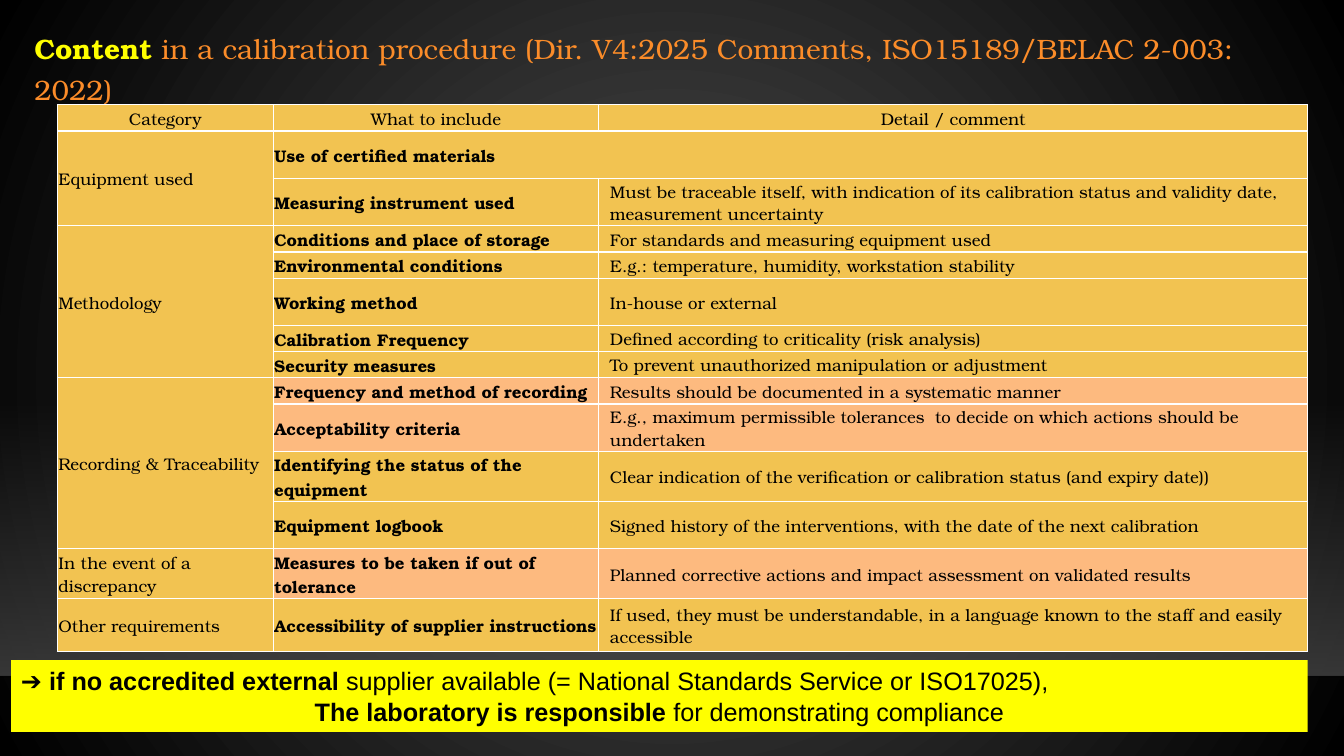
from lxml import etree
from pptx import Presentation
from pptx.dml.color import RGBColor
from pptx.enum.shapes import MSO_CONNECTOR, MSO_SHAPE
from pptx.enum.text import MSO_ANCHOR, MSO_AUTO_SIZE, PP_ALIGN
from pptx.oxml import parse_xml
from pptx.oxml.ns import nsdecls, qn
from pptx.util import Inches, Pt

LEFT, CENTER = PP_ALIGN.LEFT, PP_ALIGN.CENTER
TOP, MIDDLE = MSO_ANCHOR.TOP, MSO_ANCHOR.MIDDLE
RECT, STRAIGHT = MSO_SHAPE.RECTANGLE, MSO_CONNECTOR.STRAIGHT
NO_FIT = MSO_AUTO_SIZE.NONE
SERIF, SANS = "TeX Gyre Bonum", "Arial"

COLORS = {
    "glow": "505050", "edge": "000000", "haze": "454545", "floor": "000001",
    "key": "FFFF00", "title": "FB8C29", "text": "000000",
    "cell": "F2C351", "hot": "FDBA7F", "border": "FFFFFF",
}

TITLE = [
    ("Content", True, "key"),
    (" in a calibration procedure (Dir. V4:2025 Comments, "
     "ISO15189/BELAC 2-003: 2022)", False, "title"),
]
HEADS = ["Category", "What to include", "Detail / comment"]
# Category, then its rows: item, detail, row height, highlighted
GROUPS = [
    ("Equipment used", [
        ("Use of certified materials", "", 0.47, False),
        ("Measuring instrument used",
         "Must be traceable itself, with indication of its calibration status "
         "and validity date, measurement uncertainty", 0.47, False),
    ]),
    ("Methodology", [
        ("Conditions and place of storage",
         "For standards and measuring equipment used", 0.26, False),
        ("Environmental conditions",
         "E.g.: temperature, humidity, workstation stability", 0.26, False),
        ("Working method", "In-house or external", 0.47, False),
        ("Calibration Frequency",
         "Defined according to criticality (risk analysis)", 0.26, False),
        ("Security measures",
         "To prevent unauthorized manipulation or adjustment", 0.26, False),
    ]),
    ("Recording & Traceability", [
        ("Frequency and method of recording",
         "Results should be documented in a systematic manner", 0.26, True),
        ("Acceptability criteria",
         "E.g., maximum permissible tolerances  to decide on which actions "
         "should be undertaken", 0.47, True),
        ("Identifying the status of the equipment",
         "Clear indication of the verification or calibration status "
         "(and expiry date))", 0.47, False),
        ("Equipment logbook",
         "Signed history of the interventions, with the date of the next "
         "calibration", 0.47, False),
    ]),
    ("In the event of a discrepancy", [
        ("Measures to be taken if out of tolerance",
         "Planned corrective actions and impact assessment on validated "
         "results", 0.47, True),
    ]),
    ("Other requirements", [
        ("Accessibility of supplier instructions",
         "If used, they must be understandable, in a language known to the "
         "staff and easily accessible", 0.52, False),
    ]),
]
NOTE = [
    (LEFT, [("➔ ", False, "text"),
            ("if no accredited external ", True, "text"),
            ("supplier available (= National Standards Service or ISO17025),",
             False, "text")]),
    (CENTER, [("The laboratory is responsible ", True, "text"),
              ("for demonstrating compliance", False, "text")]),
]
WIDTHS = [2.14, 3.23, 7.03]
HEAD_H = 0.26


def rgb(name):
    return RGBColor.from_string(COLORS[name])


def box(left, top, width, height):
    return [Inches(v) for v in (left, top, width, height)]


def write(para, runs, face, size, align=LEFT):
    para.alignment = align
    for text, bold, color in runs:
        run = para.add_run()
        run.text = text
        font = run.font
        font.name, font.size, font.bold = face, Pt(size), bold
        font.color.rgb = rgb(color)


def set_alpha(color, percent):
    etree.SubElement(color, qn("a:alpha")).set("val", str(percent * 1000))


def paint_back(slide):
    slide.background.fill.solid()
    props = slide.background._cSld.bg.bgPr
    props.replace(props[0], parse_xml(
        f'<a:gradFill {nsdecls("a")} rotWithShape="1"><a:gsLst>'
        f'<a:gs pos="0"><a:srgbClr val="{COLORS["glow"]}"/></a:gs>'
        f'<a:gs pos="100000"><a:srgbClr val="{COLORS["edge"]}"/></a:gs>'
        '</a:gsLst><a:path path="circle"><a:fillToRect l="50000" t="50000" '
        'r="50000" b="50000"/></a:path></a:gradFill>'))


def add_haze(slide):
    """Grey band that fades in downwards and ends at a thin floor line."""
    haze = slide.shapes.add_shape(RECT, *box(0, 3.96, 13.33, 2.74))
    haze.shadow.inherit = False
    haze.line.fill.background()
    haze.fill.gradient()
    haze.fill.gradient_angle = 270
    for stop, place, alpha in zip(haze.fill.gradient_stops, (0, 1), (0, 80)):
        stop.position = place
        stop.color.rgb = rgb("haze")
    for color, alpha in zip(haze._element.spPr.iter(qn("a:srgbClr")), (0, 80)):
        set_alpha(color, alpha)
    floor = slide.shapes.add_connector(STRAIGHT, *box(0, 6.71, 13.33, 6.71))
    floor.line.width = Pt(1)
    floor.line.color.rgb = rgb("floor")
    props = floor._element.spPr
    set_alpha(next(props.iter(qn("a:srgbClr"))), 20)
    etree.SubElement(props, qn("a:effectLst"))


def add_title(slide):
    title = slide.shapes.title
    title.left, title.top, title.width, title.height = box(0.24, 0.2, 12.86, 0.85)
    frame = title.text_frame
    frame.word_wrap, frame.auto_size = True, NO_FIT
    frame.vertical_anchor = TOP
    para = frame.paragraphs[0]
    para.line_spacing = 1.2
    write(para, TITLE, SERIF, 20)


def fill_cell(cell, text, color="cell", bold=False, align=LEFT, indent=0):
    cell.vertical_anchor = MIDDLE
    cell.margin_left = cell.margin_top = cell.margin_right = Inches(0.01)
    cell.margin_bottom = 0
    cell.fill.solid()
    cell.fill.fore_color.rgb = rgb(color)
    props = cell._tc.get_or_add_tcPr()
    for spot, side in enumerate("LRTB"):
        props.insert(spot, parse_xml(
            f'<a:ln{side} {nsdecls("a")} w="12700"><a:solidFill>'
            f'<a:srgbClr val="{COLORS["border"]}"/></a:solidFill></a:ln{side}>'))
    para = cell.text_frame.paragraphs[0]
    para.font.size = Pt(12)
    if indent:
        pp = para._p.get_or_add_pPr()
        pp.set("marL", str(Inches(indent)))
        pp.set("indent", "0")
    if text:
        write(para, [(text, bold, "text")], SERIF, 12, align)


def add_grid(slide):
    heights = [HEAD_H] + [row[2] for _, rows in GROUPS for row in rows]
    table = slide.shapes.add_table(
        len(heights), len(WIDTHS),
        *box(0.57, 1.04, sum(WIDTHS), sum(heights))).table
    table.first_row = table.horz_banding = False
    for col, width in zip(table.columns, WIDTHS):
        col.width = Inches(width)
    for row, height in zip(table.rows, heights):
        row.height = Inches(height)
    for col, head in enumerate(HEADS):
        fill_cell(table.cell(0, col), head, align=CENTER)
    line = 1
    for group, rows in GROUPS:
        first = line
        for item, detail, _, hot in rows:
            color = "hot" if hot else "cell"
            fill_cell(table.cell(line, 0), group if line == first else "")
            fill_cell(table.cell(line, 1), item, color, bold=True)
            fill_cell(table.cell(line, 2), detail, color, indent=0.1)
            if not detail:
                table.cell(line, 1).merge(table.cell(line, 2))
            line += 1
        if len(rows) > 1:
            table.cell(first, 0).merge(table.cell(line - 1, 0))


def add_note(slide):
    note = slide.shapes.add_shape(RECT, *box(0.11, 6.55, 12.86, 0.71))
    note.shadow.inherit = False
    note.fill.solid()
    note.fill.fore_color.rgb = rgb("key")
    note.line.fill.background()
    frame = note.text_frame
    frame.word_wrap, frame.vertical_anchor = True, MIDDLE
    for spot, (align, runs) in enumerate(NOTE):
        para = frame.add_paragraph() if spot else frame.paragraphs[0]
        write(para, runs, SANS, 18, align)


def main():
    deck = Presentation()
    deck.slide_width, deck.slide_height = Inches(13.33), Inches(7.5)
    slide = deck.slides.add_slide(deck.slide_layouts[5])
    paint_back(slide)
    add_haze(slide)
    add_title(slide)
    add_grid(slide)
    add_note(slide)
    deck.save("out.pptx")


if __name__ == "__main__":
    main()
